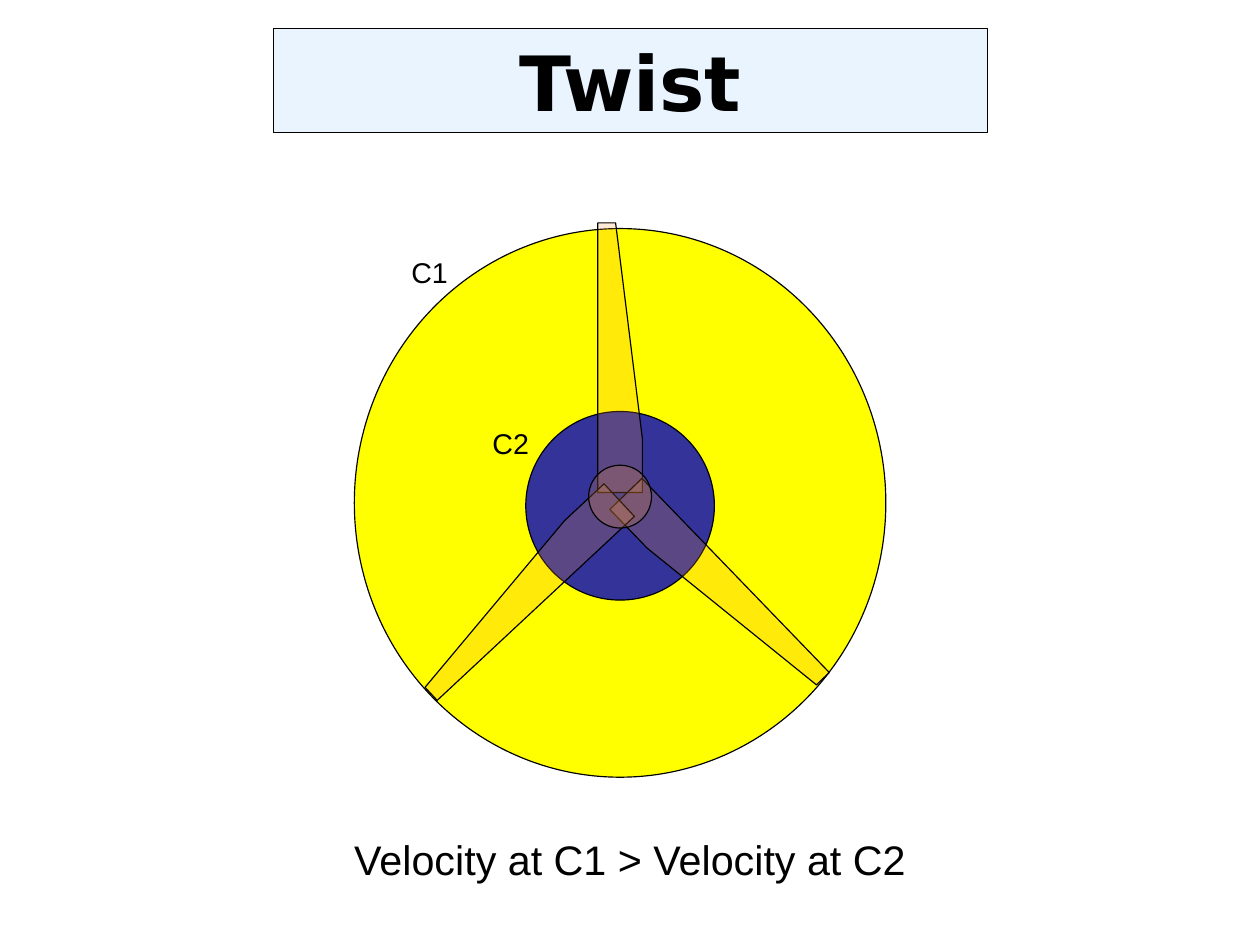
import dataclasses

import lxml.etree
import pptx
import pptx.dml.color
import pptx.enum.shapes
import pptx.enum.text
import pptx.oxml.ns
import pptx.util

Inches = pptx.util.Inches
Pt = pptx.util.Pt
RGB = pptx.dml.color.RGBColor.from_string
ALIGN = pptx.enum.text.PP_ALIGN
ANCHOR = pptx.enum.text.MSO_ANCHOR
OVAL = pptx.enum.shapes.MSO_SHAPE.OVAL
CM_PER_INCH = 2.54


@dataclasses.dataclass(frozen=True)
class Theme:
    """Colours, fonts and sizes of the slide."""
    ink: str = "000000"
    banner: str = "99CCFF"
    outer: str = "FFFF00"
    inner: str = "333399"
    blade: str = "FF9933"
    tint: int = 20
    line: float = 0.75
    title_font: str = "DejaVu Sans"
    body_font: str = "Arial"
    title_size: int = 48
    label_size: int = 18
    caption_size: int = 26


THEME = Theme()


def paint(sp, color, opacity=100):
    """Give a shape its fill, opacity and thin outline."""
    sp.fill.solid()
    sp.fill.fore_color.rgb = RGB(color)
    if opacity < 100:
        clr = sp.fill._xPr.find(".//" + pptx.oxml.ns.qn("a:srgbClr"))
        alpha = lxml.etree.SubElement(clr, pptx.oxml.ns.qn("a:alpha"))
        alpha.set("val", str(opacity * 1000))
    sp.line.color.rgb = RGB(THEME.ink)
    sp.line.width = Pt(THEME.line)


def write(sp, text, font, size, bold=False, align=ALIGN.LEFT, anchor=ANCHOR.TOP):
    """Set the single line of text in a shape and format it."""
    tf = sp.text_frame
    tf.text = text
    tf.word_wrap = True
    tf.auto_size = pptx.enum.text.MSO_AUTO_SIZE.NONE
    tf.vertical_anchor = anchor
    p = tf.paragraphs[0]
    p.alignment = align
    r = p.runs[0]
    r.font.name = font
    r.font.size = Pt(size)
    r.font.bold = bold
    r.font.color.rgb = RGB(THEME.ink)


def add_title(slide, left, top, width, height):
    """Place the title in its tinted banner."""
    sp = slide.shapes.title
    sp.left, sp.top = Inches(left), Inches(top)
    sp.width, sp.height = Inches(width), Inches(height)
    paint(sp, THEME.banner, THEME.tint)
    write(sp, "Twist", THEME.title_font, THEME.title_size, True,
          ALIGN.CENTER, ANCHOR.MIDDLE)


def add_text(shapes, text, size, left, top, width, height):
    """Add a plain text box."""
    sp = shapes.add_textbox(Inches(left), Inches(top), Inches(width), Inches(height))
    write(sp, text, THEME.body_font, size)


def add_disc(shapes, color, opacity, left, top, width, height):
    """Add an outlined disc."""
    sp = shapes.add_shape(OVAL, Inches(left), Inches(top), Inches(width), Inches(height))
    sp.shadow.inherit = False
    paint(sp, color, opacity)


def add_blade(shapes, angle, left, top, width, height):
    """Add a tapered blade, turned about the centre of its box."""
    outline = [(0, 0), (0, 1), (1, 1), (1, 0.8), (0.4, 0)]
    points = [(Inches(left + x * width), Inches(top + y * height)) for x, y in outline]
    builder = shapes.build_freeform(*points[0])
    builder.add_line_segments(points[1:], close=True)
    sp = builder.convert_to_shape()
    sp.rotation = angle
    sp.shadow.inherit = False
    paint(sp, THEME.blade, THEME.tint)


def add_rotor(slide, left, top, width, height):
    """Draw the swept discs, three blades, hub and labels in a box."""
    shapes = slide.shapes.add_group_shape().shapes
    add_disc(shapes, THEME.outer, 100, left, top, width, height)
    add_disc(shapes, THEME.inner, 100, left + 1.5, top + 1.6, 1.65, 1.65)
    for angle, dx, dy in [(0, 2.13, -0.05), (136, 3, 1.99), (227, 1.26, 2)]:
        add_blade(shapes, angle, left + dx, top + dy, 0.39, 2.36)
    add_disc(shapes, THEME.blade, THEME.tint, left + 2.05, top + 2.07, 0.55, 0.55)
    for text, dx, dy in [("C1", 0.4, 0.18), ("C2", 1.11, 1.68)]:
        add_text(shapes, text, THEME.label_size, left + dx, top + dy, 1.81, 0.4)


def main():
    """Build and save the slide."""
    prs = pptx.Presentation()
    prs.slide_width = Inches(28 / CM_PER_INCH)
    prs.slide_height = Inches(21 / CM_PER_INCH)
    slide = prs.slides.add_slide(prs.slide_layouts[5])
    add_title(slide, 2.39, 0.25, 6.25, 0.91)
    add_rotor(slide, 3.1, 2, 4.65, 4.8)
    add_text(slide.shapes, "Velocity at C1 > Velocity at C2", THEME.caption_size,
             3, 7.25, 5.5, 0.5)
    prs.save("out.pptx")


if __name__ == "__main__":
    main()
